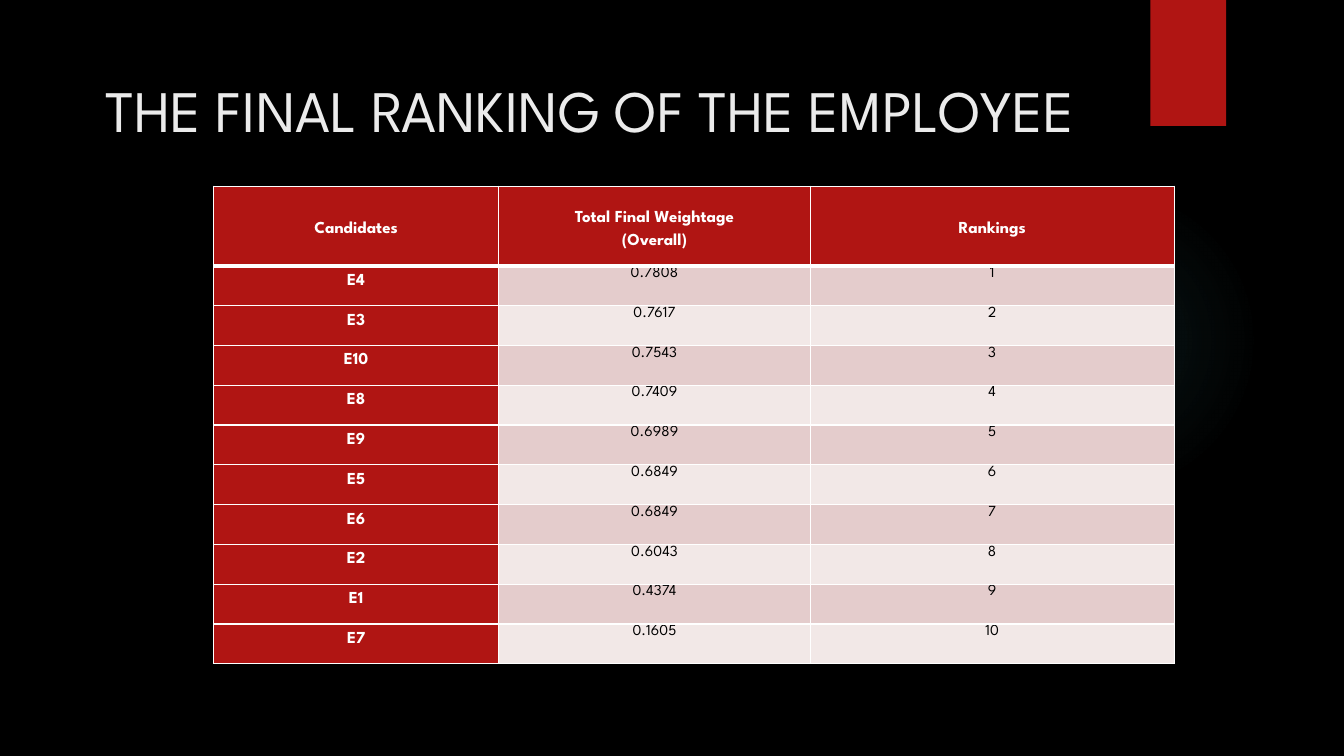
from lxml import etree
from pptx import Presentation
from pptx import util as u
from pptx.dml.color import RGBColor
from pptx.enum import shapes, text
from pptx.oxml import parse_xml
from pptx.oxml.ns import nsdecls, qn

INK = {"black": "000000", "red": "B01513", "glow": "50B9C1", "title": "EBEBEB",
       "white": "FFFFFF", "rose": "E4CCCC", "pale": "F2E8E7"}
FONT = "League Spartan"
HEADS = ["Candidates", "Total Final Weightage\n(Overall)", "Rankings"]
SCORES = [("E4", "0.7808"), ("E3", "0.7617"), ("E10", "0.7543"), ("E8", "0.7409"),
          ("E9", "0.6989"), ("E5", "0.6849"), ("E6", "0.6849"), ("E2", "0.6043"),
          ("E1", "0.4374"), ("E7", "0.1605")]
WIDTHS = [203.8, 222.5, 259.9]
HEAD_TALL, ROW_TALL = 56.9, 28.44


def tint(name):
    return RGBColor.from_string(INK[name])


def write(frame, words, size=12, color="white", bold=False, gap=None):
    frame.word_wrap = True
    for i, line in enumerate(words.split("\n")):
        para = frame.paragraphs[0] if i == 0 else frame.add_paragraph()
        para.alignment = text.PP_ALIGN.CENTER
        if gap:
            para.line_spacing = gap
        run = para.add_run()
        run.text = line
        font = run.font
        font.name, font.size, font.bold = FONT, u.Pt(size), bold
        font.color.rgb = tint(color)


class Deck:
    def __init__(self, wide, tall):
        self.show = Presentation()
        self.show.slide_width, self.show.slide_height = u.Pt(wide), u.Pt(tall)
        self.slide = self.show.slides.add_slide(self.show.slide_layouts[6])
        fill = self.slide.background.fill
        fill.solid()
        fill.fore_color.rgb = tint("black")

    def shape(self, kind, box, color):
        item = self.slide.shapes.add_shape(kind, *map(u.Pt, box))
        item.shadow.inherit = False
        item.line.fill.background()
        item.fill.solid()
        item.fill.fore_color.rgb = tint(color)
        return item

    def glow(self, box, color, stops):
        item = self.shape(shapes.MSO_SHAPE.OVAL, box, color)
        marks = "".join(
            f'<a:gs pos="{pos * 1000}"><a:srgbClr val="{INK[color]}">'
            f'<a:alpha val="{alpha * 1000}"/></a:srgbClr></a:gs>' for pos, alpha in stops)
        grad = parse_xml(
            f'<a:gradFill {nsdecls("a")}><a:gsLst>{marks}</a:gsLst><a:path path="circle">'
            '<a:fillToRect l="50000" t="50000" r="50000" b="50000"/></a:path></a:gradFill>')
        props = item.element.spPr
        props.replace(props.find(qn("a:solidFill")), grad)

    def label(self, box, words, inset, **style):
        frame = self.slide.shapes.add_textbox(*map(u.Pt, box)).text_frame
        frame.margin_top = u.Pt(inset)
        write(frame, words, **style)

    def edge(self, cell, side, width):
        line = etree.SubElement(cell._tc.get_or_add_tcPr(), qn(f"a:ln{side}"),
                                w=str(u.Pt(width)))
        fill = etree.SubElement(line, qn("a:solidFill"))
        etree.SubElement(fill, qn("a:srgbClr"), val=INK["white"])

    def cell(self, cell, words, fill, base=1, top=1, middle=False, **style):
        cell.margin_left = cell.margin_right = u.Pt(5)
        cell.margin_top = cell.margin_bottom = 0
        cell.vertical_anchor = text.MSO_ANCHOR.MIDDLE if middle else text.MSO_ANCHOR.TOP
        for side, width in zip("LRTB", (1, 1, top, base)):
            self.edge(cell, side, width)
        cell.fill.solid()
        cell.fill.fore_color.rgb = tint(fill)
        write(cell.text_frame, words, **style)

    def table(self, left, top):
        talls = [HEAD_TALL] + [ROW_TALL] * len(SCORES)
        box = left, top, sum(WIDTHS), sum(talls)
        grid = self.slide.shapes.add_table(len(talls), len(WIDTHS), *map(u.Pt, box)).table
        for col, wide in zip(grid.columns, WIDTHS):
            col.width = u.Pt(wide)
        for row, tall in zip(grid.rows, talls):
            row.height = u.Pt(tall)
        strong = {"bold": True, "gap": 1.5}
        for c, head in enumerate(HEADS):
            self.cell(grid.cell(0, c), head, "red", base=3, middle=True, **strong)
        for rank, (name, score) in enumerate(SCORES, 1):
            top = 3 if rank == 1 else 1
            band = "rose" if rank % 2 else "pale"
            self.cell(grid.cell(rank, 0), name, "red", top=top, **strong)
            for c, value in enumerate((score, str(rank)), 1):
                self.cell(grid.cell(rank, c), value, band, top=top,
                          size=11, color="black", gap=1.07)


def main():
    deck = Deck(960, 540)
    deck.glow((677.5, 131.8, 221.8, 221.8), "glow", [(0, 7), (36, 6), (69, 0)])
    deck.shape(shapes.MSO_SHAPE.RECTANGLE, (821.8, 0, 54, 90), "red")
    deck.label((51, 36, 741, 110), "THE FINAL RANKING OF THE EMPLOYEE", 16.6,
               size=42, color="title")
    deck.table(152.5, 133)
    deck.show.save("out.pptx")


if __name__ == "__main__":
    main()
